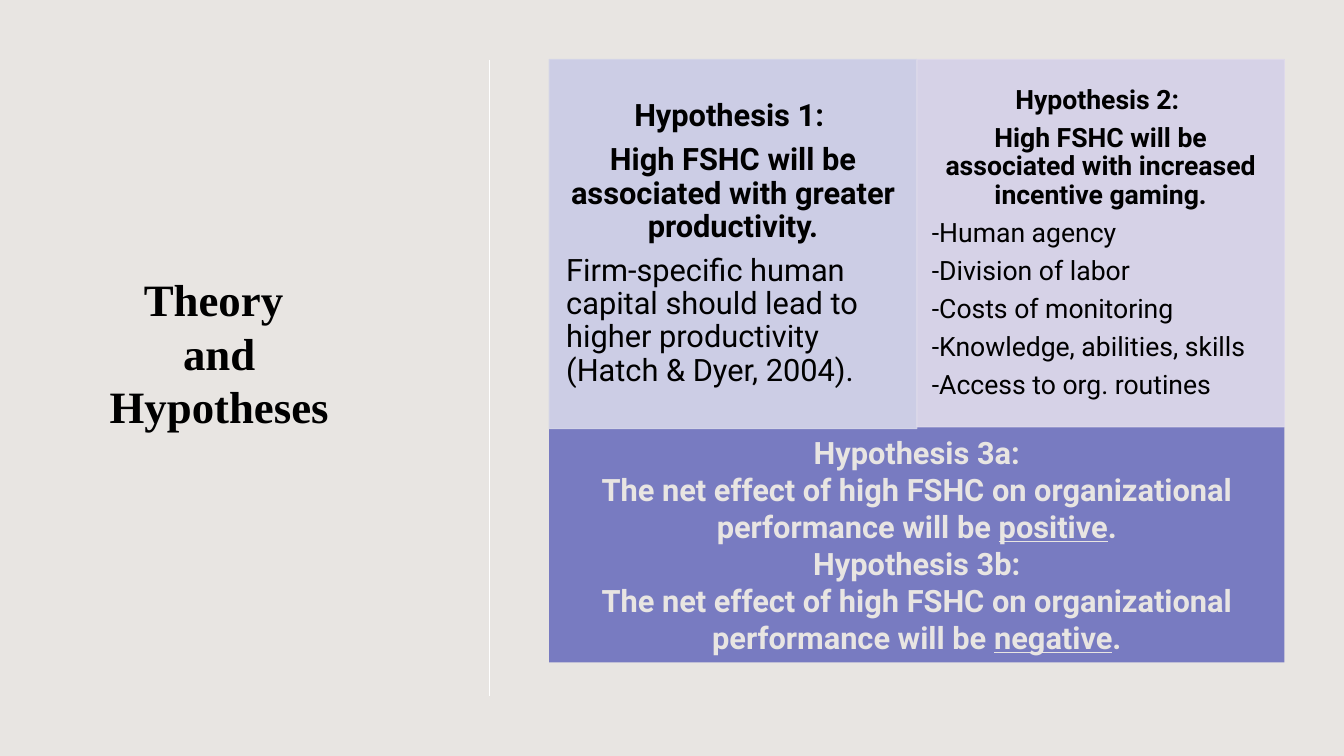
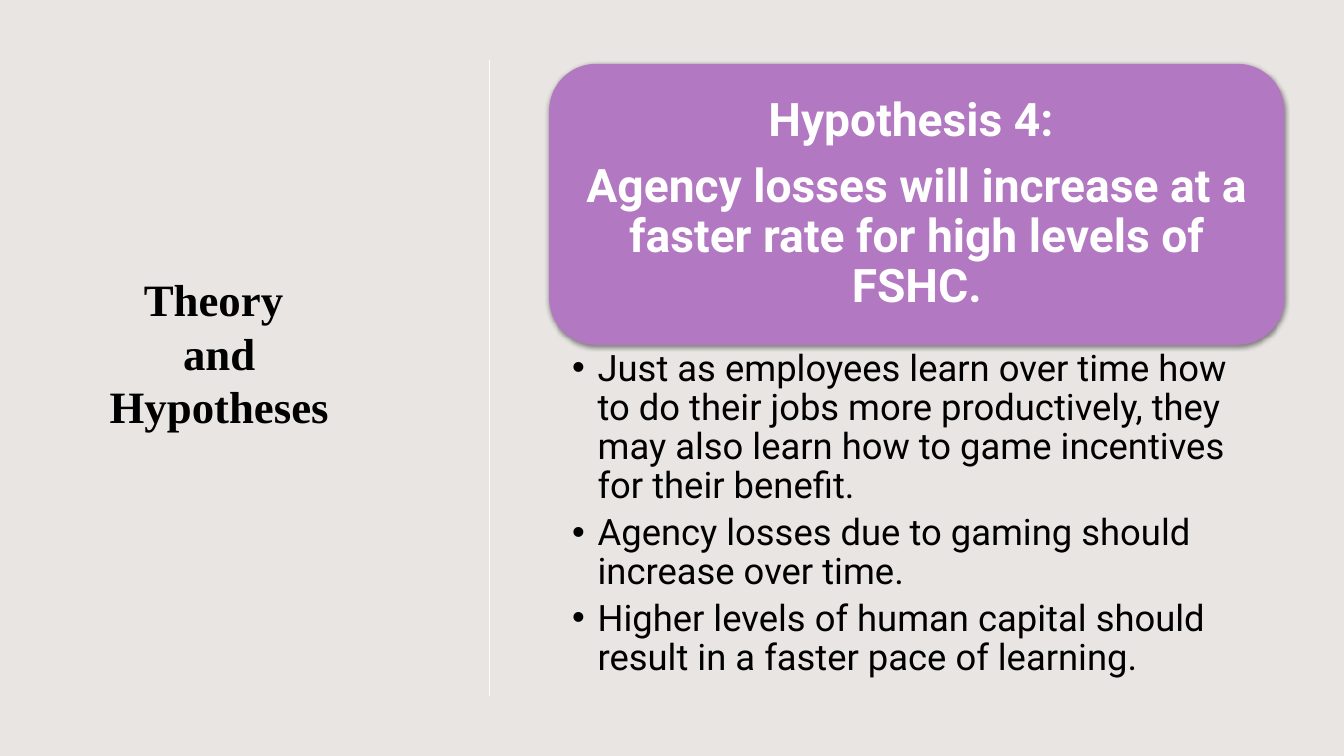
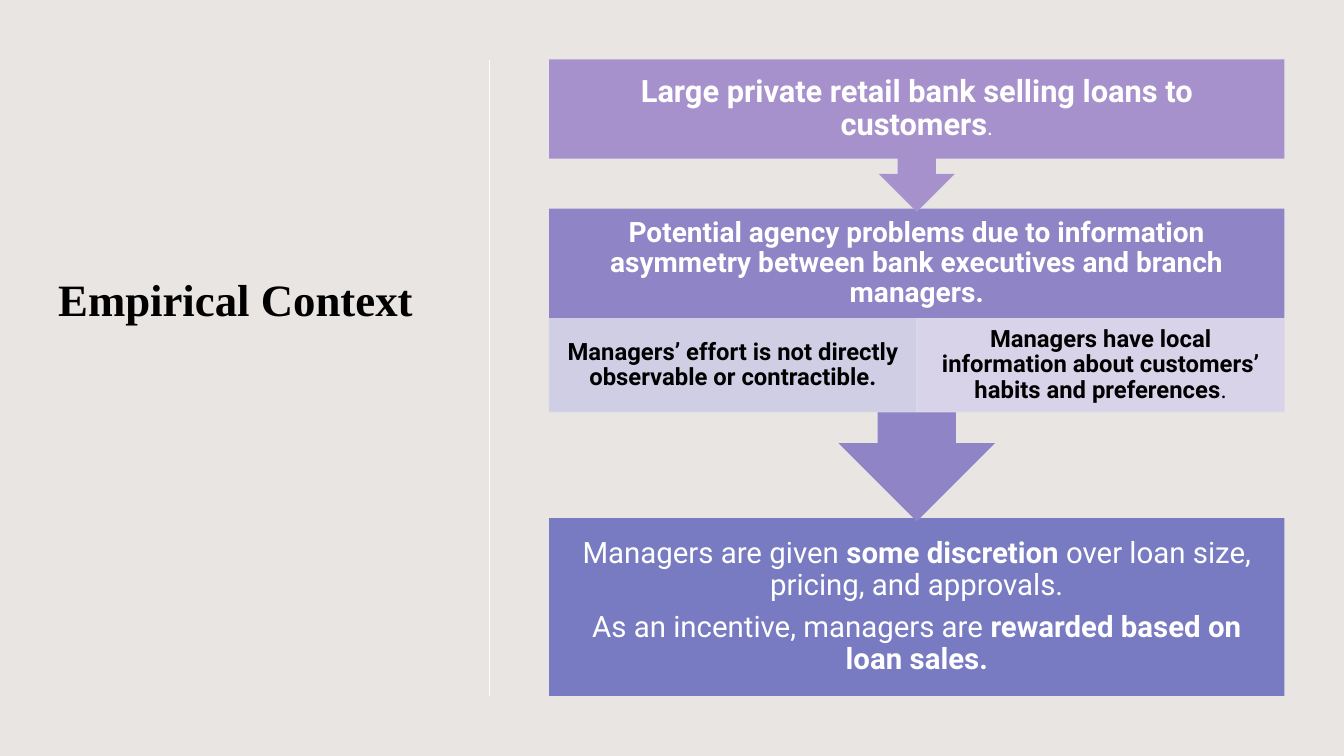
"""Build three slides on hypotheses and empirical context."""
from lxml.etree import SubElement
from pptx import Presentation
from pptx.dml.color import RGBColor
from pptx.enum.shapes import MSO_CONNECTOR, MSO_SHAPE
from pptx.enum.text import MSO_ANCHOR, MSO_AUTO_SIZE, PP_ALIGN
from pptx.oxml.ns import qn
from pptx.util import Cm, Pt

BACKGROUND, BLACK, WHITE = "E8E5E2", "000000", "FFFFFF"
BLUE, VIOLET, LILAC, ORCHID = "787BC1", "8F85C6", "A791CC", "B278C1"
PALE_BLUE, PALE_LILAC = "D6D7E9", "E1DCEC"
TITLE_FONT, BODY_FONT = "Times New Roman", "Roboto"

LEFT, WIDTH, TOP, BOTTOM = 13.84, 18.53, 1.5, 17.55
HALF = WIDTH / 2
DIVIDER = 12.32

PLAIN, BOLD = {"bold": False}, {"bold": True}
UNDERLINED = {"bold": True, "underline": True}
SMALL = {"bold": False, "size": Pt(16)}

THEORY_TITLE = ["Theory ", "and", "Hypotheses"]
CONTEXT_TITLE = ["Empirical Context"]


def centred(*runs):
    """Return a centred paragraph."""
    return PP_ALIGN.CENTER, runs


def left(text):
    """Return a plain paragraph aligned left."""
    return PP_ALIGN.LEFT, [(text, PLAIN)]


HYPOTHESIS_1 = [
    centred(("Hypothesis 1: ", BOLD)),
    centred(("High FSHC will be associated with greater productivity.", BOLD)),
    left("Firm-specific human capital should lead to higher productivity "
         "(Hatch & Dyer, 2004)."),
]
GAMING_SOURCES = ["-Human agency", "-Division of labor", "-Costs of monitoring",
                  "-Knowledge, abilities, skills", "-Access to org. routines"]
HYPOTHESIS_2 = [
    centred(("Hypothesis 2: ", BOLD)),
    centred(("High FSHC will be associated with increased incentive gaming.", BOLD)),
    *map(left, GAMING_SOURCES),
]
HYPOTHESIS_3 = [
    paragraph
    for name, effect in [("3a", "positive"), ("3b", "negative")]
    for paragraph in (
        centred((f"Hypothesis {name}:", BOLD)),
        centred(("The net effect of high FSHC on organizational performance will be ", BOLD),
                (effect, UNDERLINED), (".", BOLD)))
]
HYPOTHESIS_4 = [
    centred(("Hypothesis 4: ", BOLD)),
    centred(("Agency losses will increase at a faster rate for high levels of FSHC.", BOLD)),
]
LEARNING = [
    left("Just as employees learn over time how to do their jobs more productively, "
         "they may also learn how to game incentives for their benefit."),
    left("Agency losses due to gaming should increase over time."),
    left("Higher levels of human capital should result in a faster pace of learning."),
]
BANK = [centred(("Large private retail bank selling loans to customers", BOLD), (".", SMALL))]
AGENCY = [centred(("Potential agency problems due to information asymmetry between "
                   "bank executives and branch managers.", BOLD))]
EFFORT = [centred(("Managers’ effort is not directly observable or contractible.", BOLD))]
LOCAL = [centred(("Managers have local information about customers’ habits and preferences", BOLD),
                 (".", PLAIN))]
DISCRETION = [
    centred(("Managers are given ", PLAIN), ("some discretion", BOLD),
            (" over loan size, pricing, and approvals.", PLAIN)),
    centred(("As an incentive, managers are ", PLAIN), ("rewarded based on loan sales.", BOLD)),
]


def rgb(color):
    """Turn a hex string into a colour."""
    return RGBColor.from_string(color)


def place(shape, box):
    """Move and size a shape, in centimetres."""
    shape.left, shape.top, shape.width, shape.height = map(Cm, box)


def write(shape, paragraphs, size, color=BLACK, font=BODY_FONT, insets=(0.4, 0.1, 0.4, 0.1),
          anchor=MSO_ANCHOR.MIDDLE, spacing=0.9, after=0.35):
    """Fill a shape with formatted paragraphs."""
    frame = shape.text_frame
    frame.word_wrap, frame.auto_size = True, MSO_AUTO_SIZE.NONE
    frame.vertical_anchor = anchor
    (frame.margin_left, frame.margin_top,
     frame.margin_right, frame.margin_bottom) = map(Cm, insets)
    for index, (alignment, runs) in enumerate(paragraphs):
        paragraph = frame.add_paragraph() if index else frame.paragraphs[0]
        paragraph.alignment = alignment
        paragraph.line_spacing = spacing
        paragraph.space_before, paragraph.space_after = Pt(0), Pt(round(size * after, 1))
        for text, style in runs:
            run = paragraph.add_run()
            run.text = text
            run.font.name, run.font.size = font, Pt(size)
            run.font.color.rgb = rgb(color)
            for name, value in style.items():
                setattr(run.font, name, value)


def add_box(slide, kind, box, color):
    """Add a filled shape without outline."""
    shape = slide.shapes.add_shape(kind, *map(Cm, box))
    shape.shadow.inherit = False
    shape.fill.solid()
    shape.fill.fore_color.rgb = rgb(color)
    shape.line.fill.background()
    return shape


def add_text(slide, box, paragraphs, size, color, **layout):
    """Add a text box."""
    write(slide.shapes.add_textbox(*map(Cm, box)), paragraphs, size, color, **layout)


def add_pale_pair(slide, top, cells):
    """Add two translucent cells side by side."""
    for index, (color, height, paragraphs, size, inset) in enumerate(cells):
        shape = add_box(slide, MSO_SHAPE.RECTANGLE,
                        (LEFT + index * HALF, top, HALF, height), color)
        write(shape, paragraphs, size, insets=(inset, 0.05, inset, 0.05))
        shape.line.color.rgb = rgb(color)
        shape.line.width = Pt(0.75)
        for element in shape._element.spPr.iter(qn("a:srgbClr")):
            SubElement(element, qn("a:alpha"), val="90000")


def add_shadow(shape):
    """Give a shape a soft shadow below."""
    effects = shape._element.spPr.find(qn("a:effectLst"))
    shadow = SubElement(effects, qn("a:outerShdw"), blurRad=str(Pt(3.5)), dist=str(Pt(1.1)),
                        dir="5400000", algn="ctr", rotWithShape="0")
    color = SubElement(shadow, qn("a:srgbClr"), val=BLACK)
    SubElement(color, qn("a:alpha"), val="45000")


def start_slide(presentation, layout, title_lines, title_left=0.51, title_width=10.03):
    """Add a slide with its title and divider."""
    slide = presentation.slides.add_slide(presentation.slide_layouts[layout])
    title = slide.shapes.title
    place(title, (title_left, 2.64, title_width, 13.03))
    write(title, [centred((line, BOLD)) for line in title_lines], 32, font=TITLE_FONT,
          insets=(0.25, 4.2, 0.25, 0.13), anchor=MSO_ANCHOR.TOP, spacing=1.0, after=0)
    divider = slide.shapes.add_connector(
        MSO_CONNECTOR.STRAIGHT, Cm(DIVIDER), Cm(TOP), Cm(DIVIDER), Cm(BOTTOM))
    divider.line.color.rgb = rgb(WHITE)
    divider.line.width = Pt(0.5)
    SubElement(divider._element.spPr, qn("a:effectLst"))
    return slide


def build_first_hypotheses(presentation):
    """Build the slide with hypotheses 1 to 3."""
    slide = start_slide(presentation, 5, THEORY_TITLE)
    panel_height, pair_height = 15.19, 9.3
    add_box(slide, MSO_SHAPE.RECTANGLE, (LEFT, TOP, WIDTH, panel_height), BLUE)
    add_pale_pair(slide, TOP, [(PALE_BLUE, pair_height, HYPOTHESIS_1, 22, 0.43),
                               (PALE_LILAC, pair_height - 0.04, HYPOTHESIS_2, 19, 0.38)])
    add_text(slide, (LEFT, TOP + pair_height, WIDTH, panel_height - pair_height),
             HYPOTHESIS_3, 22, BACKGROUND, insets=(0.25, 0.13, 0.25, 0),
             anchor=MSO_ANCHOR.TOP, spacing=1.0, after=0)


def build_fourth_hypothesis(presentation):
    """Build the slide with hypothesis 4 and its reasons."""
    slide = start_slide(presentation, 1, THEORY_TITLE)
    card = add_box(slide, MSO_SHAPE.ROUNDED_RECTANGLE, (LEFT, 1.61, WIDTH, 7.08), ORCHID)
    write(card, HYPOTHESIS_4, 33, WHITE, insets=(0.36,) * 4)
    add_shadow(card)
    body = slide.placeholders[1]
    place(body, (LEFT, 8.69, WIDTH, 8.74))
    write(body, LEARNING, 26, insets=(0.58, 0.12, 0.66, 0.12),
          anchor=MSO_ANCHOR.TOP, after=0.2)
    for paragraph in body.text_frame.paragraphs:
        properties = paragraph._p.get_or_add_pPr()
        properties.set("marL", str(Cm(0.64)))
        properties.set("indent", str(-Cm(0.64)))


def build_context(presentation):
    """Build the slide with the chain of context boxes."""
    slide = start_slide(presentation, 5, CONTEXT_TITLE, 0.86, 10.16)
    agency_top, cell_top, cell_height = 5.26, 8.03, 2.35
    outcome = add_box(slide, MSO_SHAPE.RECTANGLE, (LEFT, 13.06, WIDTH, 4.48), BLUE)
    write(outcome, DISCRETION, 21, WHITE)
    add_box(slide, MSO_SHAPE.DOWN_ARROW_CALLOUT, (LEFT, agency_top, WIDTH, 7.88), VIOLET)
    add_text(slide, (LEFT, agency_top, WIDTH, cell_top - agency_top), AGENCY, 20, WHITE)
    add_pale_pair(slide, cell_top, [(PALE_BLUE, cell_height, EFFORT, 17, 0.33),
                                    (PALE_LILAC, cell_height, LOCAL, 17, 0.33)])
    bank = add_box(slide, MSO_SHAPE.DOWN_ARROW_CALLOUT, (LEFT, TOP, WIDTH, 3.84), LILAC)
    write(bank, BANK, 22, WHITE)


def main():
    """Build and save the presentation."""
    presentation = Presentation()
    presentation.slide_width, presentation.slide_height = Cm(33.87), Cm(19.05)
    fill = presentation.slide_master.background.fill
    fill.solid()
    fill.fore_color.rgb = rgb(BACKGROUND)
    build_first_hypotheses(presentation)
    build_fourth_hypothesis(presentation)
    build_context(presentation)
    presentation.save("out.pptx")


if __name__ == "__main__":
    main()
